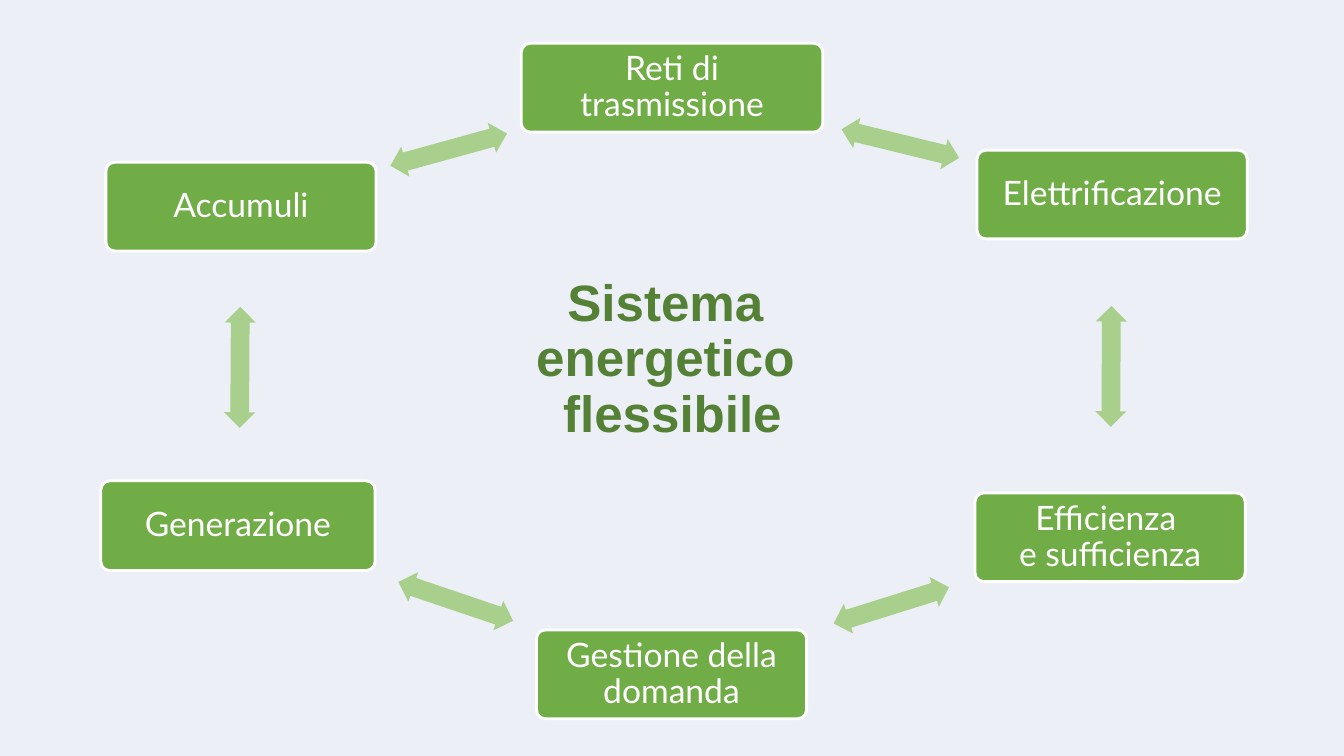
from pptx import Presentation
from pptx.dml.color import RGBColor
from pptx.enum.shapes import MSO_SHAPE
from pptx.enum.text import MSO_ANCHOR, MSO_AUTO_SIZE, PP_ALIGN
from pptx.util import Inches, Pt


def rgb(value):
    return RGBColor.from_string(value)


def write(sp, text, margin_y, color, font):
    tf = sp.text_frame
    frame = {"word_wrap": True, "auto_size": MSO_AUTO_SIZE.NONE,
             "vertical_anchor": MSO_ANCHOR.MIDDLE,
             "margin_left": Inches(0.1), "margin_right": Inches(0.1),
             "margin_top": Inches(margin_y), "margin_bottom": Inches(margin_y)}
    for name, value in frame.items():
        setattr(tf, name, value)
    p = tf.paragraphs[0]
    p.text = text
    p.alignment = PP_ALIGN.CENTER
    p.line_spacing = 0.9
    for r in p.runs:
        for name, value in font.items():
            setattr(r.font, name, value)
        r.font.color.rgb = rgb(color)


prs = Presentation()
prs.slide_width, prs.slide_height = Inches(13.33), Inches(7.5)
slide = prs.slides.add_slide(prs.slide_layouts[5])
slide.background.fill.solid()
slide.background.fill.fore_color.rgb = rgb("ECF0F6")

# Title in the middle of the ring
title = slide.shapes.title
place = {"left": 3.48, "top": 2.97, "width": 6.38, "height": 1.21}
for name, value in place.items():
    setattr(title, name, Inches(value))
write(title, "Sistema \venergetico \vflessibile", 0.05, "548135",
      {"name": "Arial", "size": Pt(36.5), "bold": True})

# Ring of boxes, clockwise from the top: text, left, top, width, height
boxes = [
    ("Reti di trasmissione", 5.17, 0.43, 2.99, 0.88),
    ("Elettrificazione", 9.69, 1.49, 2.68, 0.88),
    ("Efficienza \ve sufficienza", 9.67, 4.89, 2.68, 0.88),
    ("Gestione della domanda", 5.32, 6.25, 2.68, 0.88),
    ("Generazione", 1.0, 4.77, 2.72, 0.89),
    ("Accumuli", 1.05, 1.61, 2.68, 0.88),
]
for text, *box in boxes:
    sp = slide.shapes.add_shape(MSO_SHAPE.ROUNDED_RECTANGLE, *map(Inches, box))
    sp.shadow.inherit = False
    sp.adjustments[0] = 0.1
    sp.fill.solid()
    sp.fill.fore_color.rgb = rgb("70AD47")
    sp.line.color.rgb = rgb("FFFFFF")
    sp.line.width = Pt(2)
    write(sp, text, 0.1, "FFFFFF", {"name": "Lato", "size": Pt(24)})

# Double arrows between neighbours: left, top, rotation
arrows = [
    (8.33, 1.27, 13.7),
    (10.42, 3.48, 90.3),
    (8.24, 5.85, 162.6),
    (3.92, 5.81, 198.7),
    (1.78, 3.49, 270.3),
    (3.85, 1.33, 344.6),
]
for left, top, angle in arrows:
    sp = slide.shapes.add_shape(MSO_SHAPE.LEFT_RIGHT_ARROW, Inches(left),
                                Inches(top), Inches(1.2), Inches(0.31))
    sp.shadow.inherit = False
    sp.rotation = angle
    sp.adjustments[0], sp.adjustments[1] = 0.6, 0.5
    sp.fill.solid()
    sp.fill.fore_color.rgb = rgb("A8D08C")
    sp.line.fill.background()

prs.save("out.pptx")
